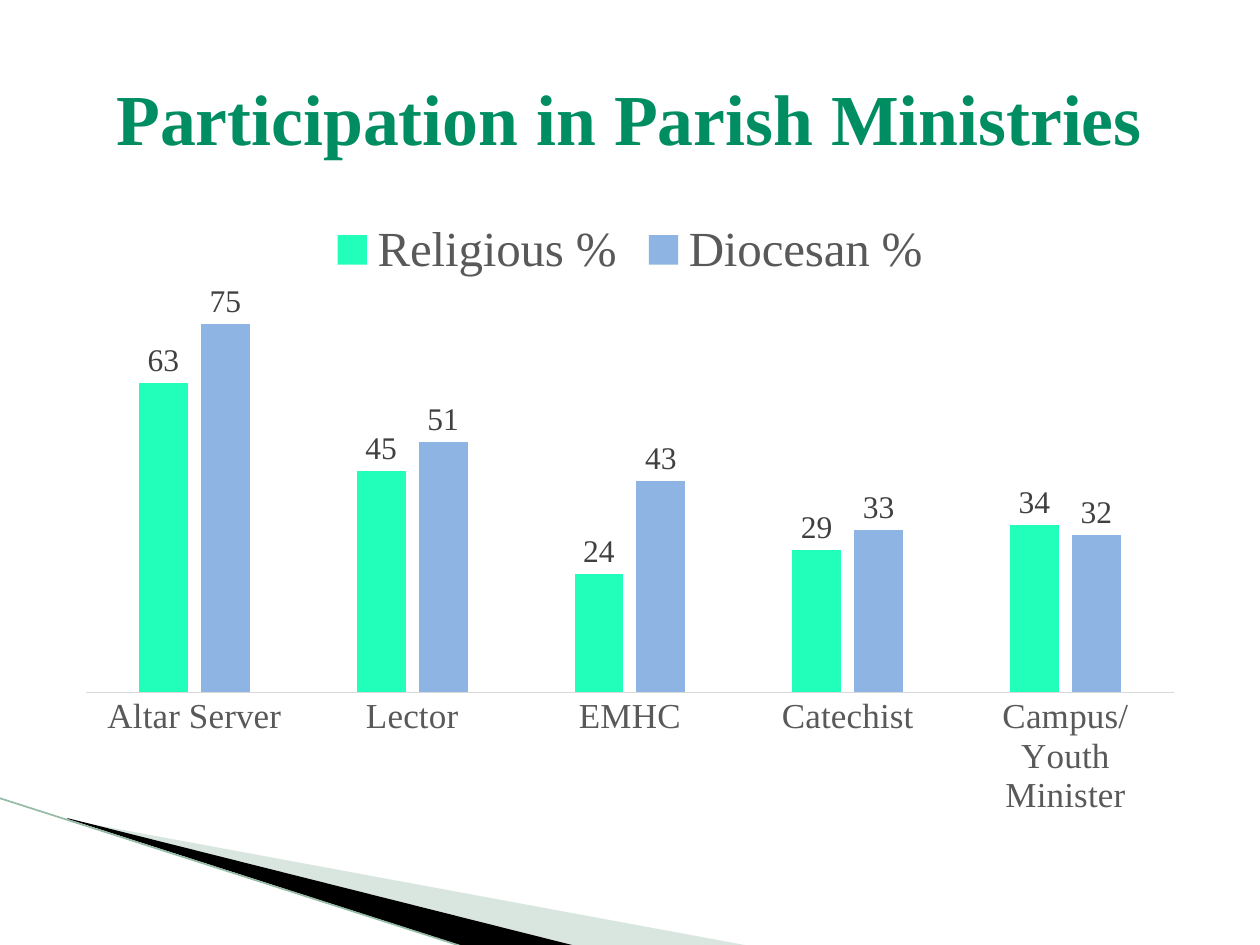
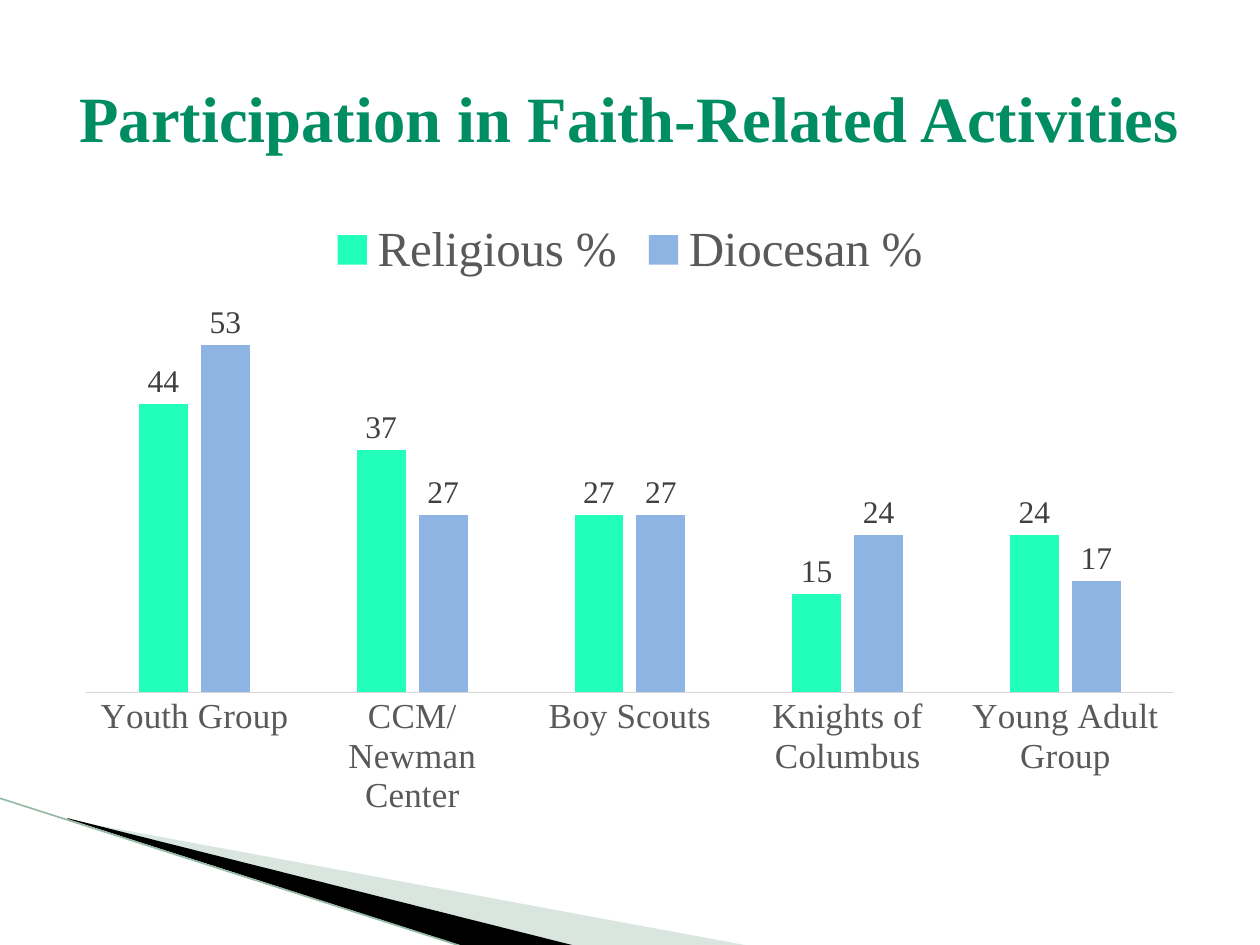
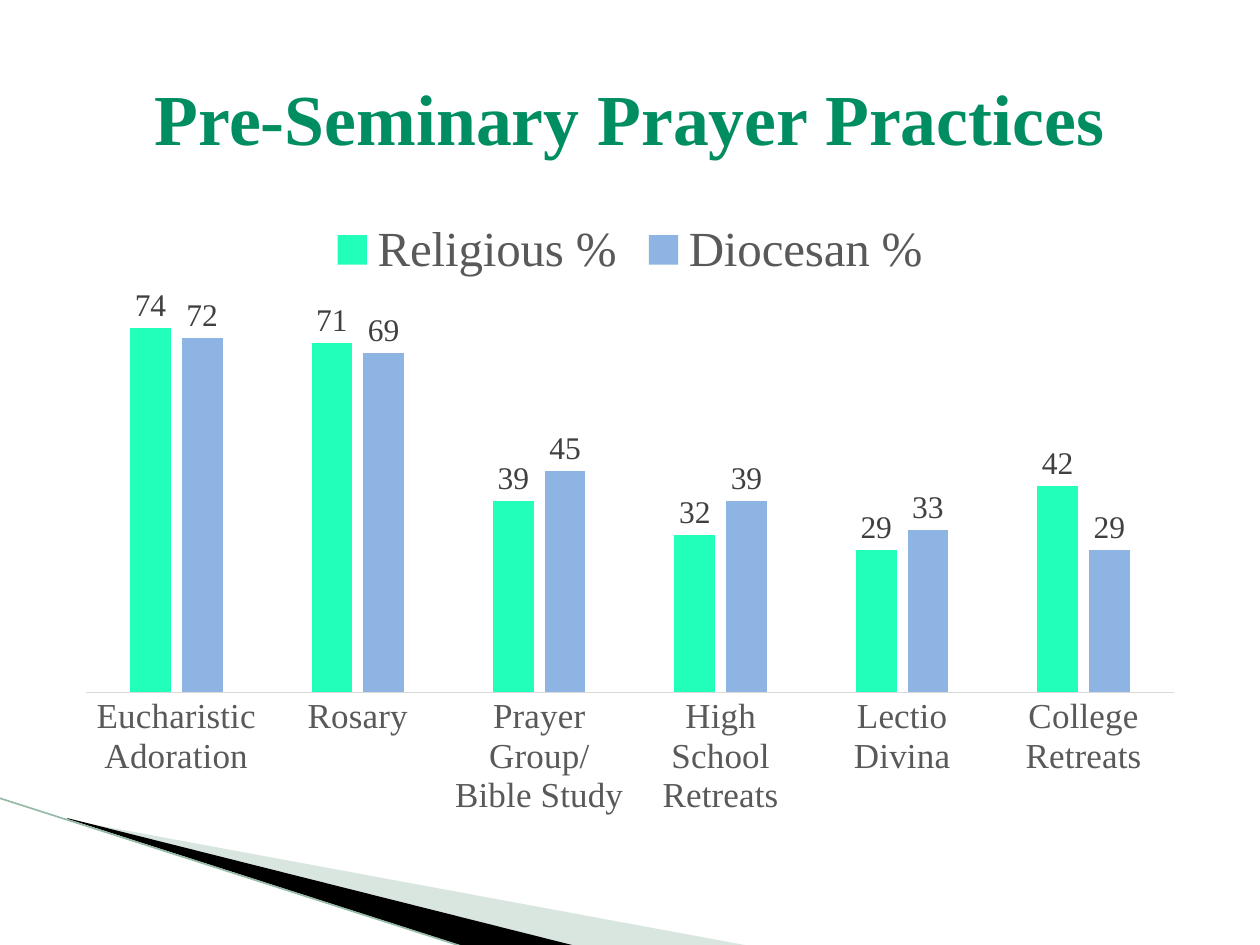
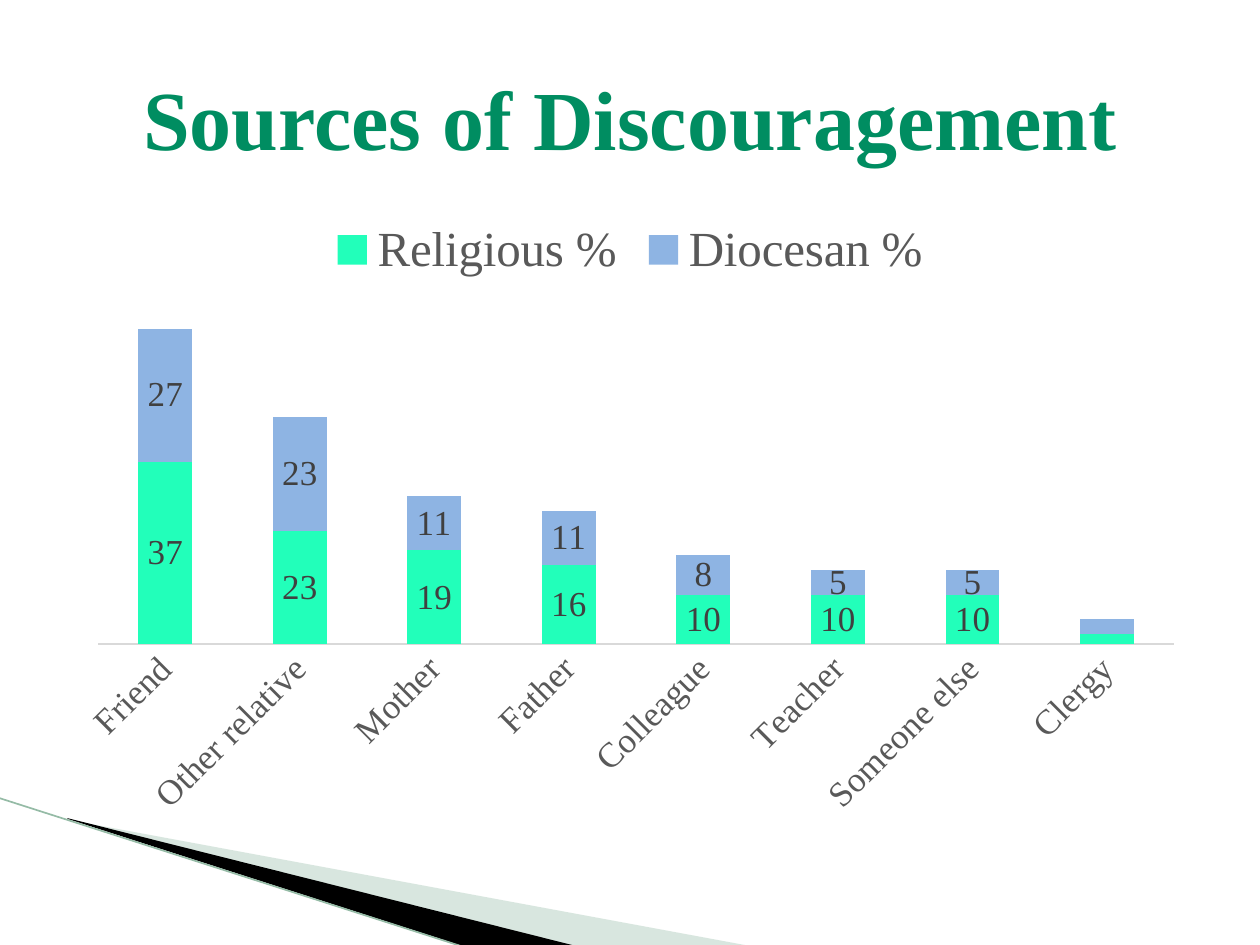
from lxml.etree import SubElement
from pptx import Presentation
from pptx.chart.data import CategoryChartData as Data
from pptx.dml.color import RGBColor
from pptx.enum.chart import XL_CHART_TYPE as Kind, XL_LABEL_POSITION as Spot
from pptx.enum.chart import XL_LEGEND_POSITION as Side, XL_TICK_MARK as Tick
from pptx.enum.shapes import MSO_CONNECTOR as Link
from pptx.enum.text import MSO_ANCHOR as Anchor, PP_ALIGN as Align
from pptx.oxml import parse_xml
from pptx.oxml.ns import nsdecls, qn
from pptx.util import Pt

PX = 914400 // 126
SERIF, MONO = "Times New Roman", "Courier New"
GREEN, SAGE, LEAF, BLACK = "008D61", "9FC2AF", "95BBA6", "000000"
GRAY, DARK, RULE = "595959", "404040", "D9D9D9"
SERIES = {"Religious %": "22FFBA", "Diocesan %": "8EB4E3"}
SWOOSH, HEAD, PLOT = (0, 798, 750, 150), (63, 38, 1134, 157), (63, 204, 1134, 624)
AUTO, SLANT = -60000000, -2700000

SLIDES = [
    ("Participation in Parish Ministries", 41, False,
     ["Altar Server", "Lector", "EMHC", "Catechist", "Campus/Youth Minister"],
     [63, 45, 24, 29, 34], [75, 51, 43, 33, 32]),
    ("Participation in Faith-Related Activities", 36.9, False,
     ["Youth Group", "CCM/Newman Center", "Boy Scouts",
      "Knights of Columbus", "Young Adult Group"],
     [44, 37, 27, 15, 24], [53, 27, 27, 24, 17]),
    ("Pre-Seminary Prayer Practices", 41, False,
     ["Eucharistic Adoration", "Rosary", "Prayer Group/Bible Study",
      "High School Retreats", "Lectio Divina", "College Retreats"],
     [74, 71, 39, 32, 29, 42], [72, 69, 45, 39, 33, 29]),
    ("Sources of Discouragement", 48, True,
     ["Friend", "Other relative", "Mother", "Father",
      "Colleague", "Teacher", "Someone else", "Clergy"],
     [37, 23, 19, 16, 10, 10, 10, 2], [27, 23, 11, 11, 8, 5, 5, 3]),
]


def emu(*sizes):
    """Turn px into EMU."""
    return [size * PX for size in sizes]


def paint(part, color):
    """Give a fill, line or font colour from a hex string."""
    part.rgb = RGBColor.from_string(color)


def style(font, size, color, name=SERIF):
    """Set the face, size and colour of a font."""
    font.name, font.size = name, Pt(size)
    paint(font.color, color)


def blade(slide, box, points, color, alpha=100):
    """Draw a filled outline from points relative to the box."""
    spots = [emu(box[0] + x, box[1] + y) for x, y in points]
    pen = slide.shapes.build_freeform(*spots[0])
    pen.add_line_segments(spots[1:])
    shape = pen.convert_to_shape()
    shape.shadow.inherit = False
    shape.line.fill.background()
    shape.fill.solid()
    paint(shape.fill.fore_color, color)
    if alpha < 100:
        tone = shape.fill._xPr.find(".//" + qn("a:srgbClr"))
        SubElement(tone, qn("a:alpha"), val=str(alpha * 1000))


def swoosh(slide, box):
    """Draw the two blades and the edge line at the foot."""
    left, top = box[:2]
    blade(slide, box, [(69, 22), (750, 148), (575, 148), (69, 21)], SAGE, 40)
    blade(slide, box, [(67, 20), (576, 148), (469, 150), (68, 21)], BLACK)
    ends = emu(left - 1, top, left + 467, top + 150)
    edge = slide.shapes.add_connector(Link.STRAIGHT, *ends)
    edge.line.width = Pt(0.95)
    paint(edge.line.color, LEAF)
    SubElement(edge._element.spPr, qn("a:effectLst"))


def title(slide, box, text, size):
    """Write the centred slide title."""
    frame = slide.shapes.add_textbox(*emu(*box)).text_frame
    frame.word_wrap = True
    frame.vertical_anchor = Anchor.MIDDLE
    para = frame.paragraphs[0]
    para.alignment = Align.CENTER
    run = para.add_run()
    run.text = text
    run.font.bold = True
    style(run.font, size, GREEN)


def axes(chart, rot):
    """Style the category axis and hide the value axis."""
    axis = chart.category_axis
    axis.major_tick_mark = axis.minor_tick_mark = Tick.NONE
    axis.has_major_gridlines = False
    style(axis.tick_labels.font, 20, GRAY)
    axis._element.find(qn("c:txPr")).find(qn("a:bodyPr")).set("rot", str(rot))
    axis.format.line.width = Pt(0.75)
    paint(axis.format.line.color, RULE)
    chart.value_axis.has_major_gridlines = False
    chart.value_axis.visible = False


def bars(series, color, stacked, last):
    """Colour one series and label its bars."""
    series.format.fill.solid()
    paint(series.format.fill.fore_color, color)
    series.invert_if_negative = False
    labels = series.data_labels
    labels.show_value = True
    labels.position = Spot.CENTER if stacked else Spot.OUTSIDE_END
    style(labels.font, 20 if stacked else 18, DARK)
    if stacked:
        labels._element.insert(0, parse_xml(
            f'<c:dLbl {nsdecls("c")}><c:idx val="{last}"/>'
            '<c:delete val="1"/></c:dLbl>'))


def graph(slide, box, stacked, cats, *rows):
    """Add the column chart with its legend on top."""
    data = Data()
    data.categories = cats
    for name, row in zip(SERIES, rows):
        data.add_series(name, row)
    kind = Kind.COLUMN_STACKED if stacked else Kind.COLUMN_CLUSTERED
    chart = slide.shapes.add_chart(kind, *emu(*box), data).chart
    style(chart.font, 10, BLACK, MONO)
    chart.has_title = False
    chart.has_legend = True
    chart.legend.position = Side.TOP
    chart.legend.include_in_layout = False
    style(chart.legend.font, 28, GRAY)
    axes(chart, SLANT if stacked else AUTO)
    plot = chart.plots[0]
    plot.vary_by_categories = False
    plot.gap_width, plot.overlap = (150, 100) if stacked else (219, -27)
    for series, color in zip(plot.series, SERIES.values()):
        bars(series, color, stacked, len(cats) - 1)


def main():
    """Build and save the slides."""
    deck = Presentation()
    deck.slide_width, deck.slide_height = emu(1260, 945)
    for text, size, stacked, *table in SLIDES:
        slide = deck.slides.add_slide(deck.slide_layouts[6])
        swoosh(slide, SWOOSH)
        graph(slide, PLOT, stacked, *table)
        title(slide, HEAD, text, size)
    deck.save("out.pptx")


if __name__ == "__main__":
    main()
